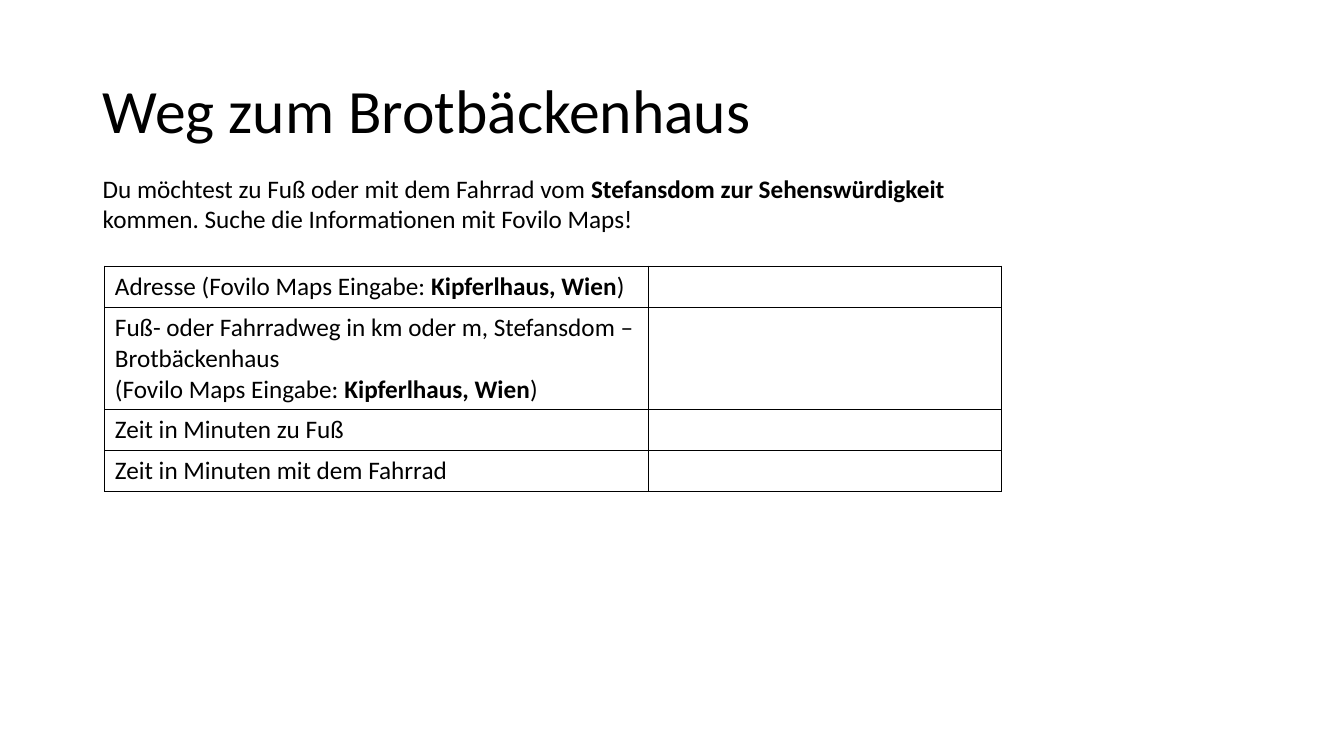
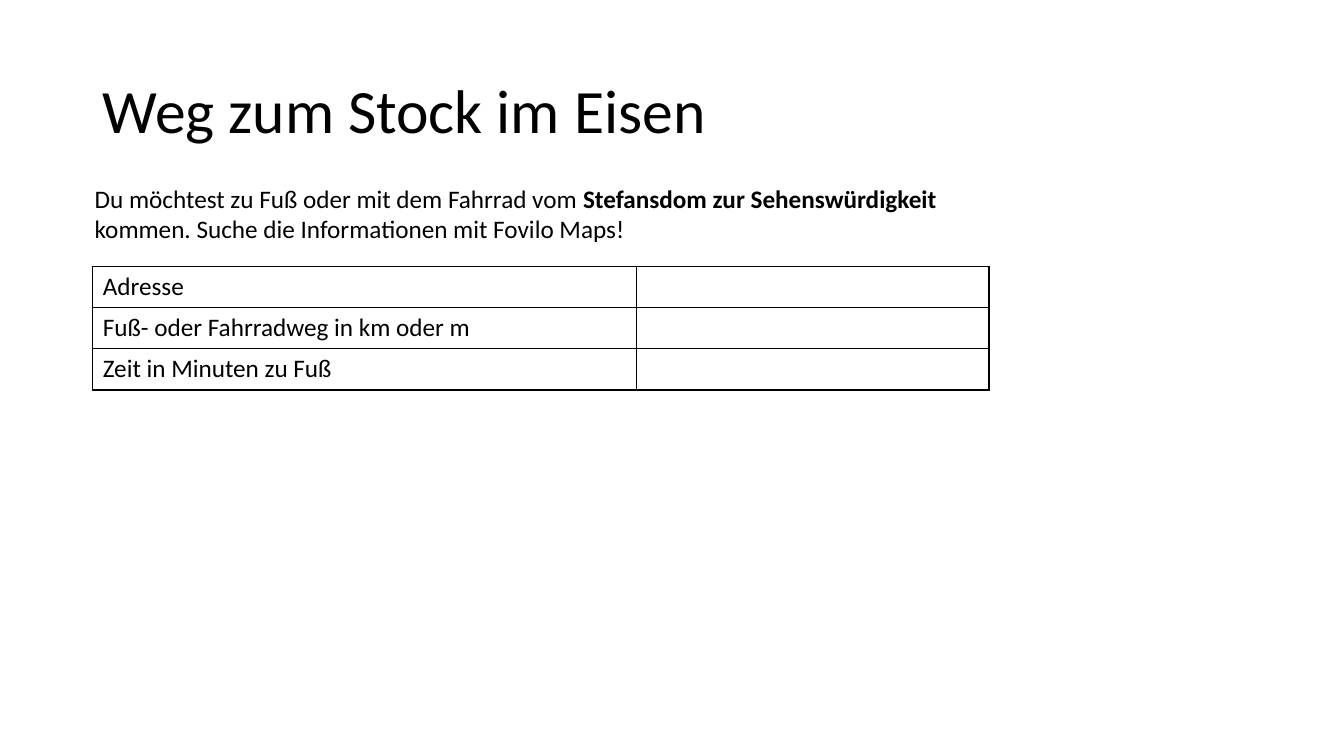
from dataclasses import dataclass

from lxml import etree
from pptx import Presentation
from pptx.dml.color import RGBColor
from pptx.enum.text import MSO_ANCHOR
from pptx.oxml.ns import qn
from pptx.util import Pt

MIDDLE, TOP = MSO_ANCHOR.MIDDLE, MSO_ANCHOR.TOP
PX = 9144  # EMU per px, 100 px to the inch


@dataclass(frozen=True)
class Theme:
    font: str = "Calibri"
    ink: str = "000000"
    title_size: int = 44
    body_size: int = 18
    border_width: int = 1


THEME = Theme()
SLIDE_SIZE = (1333, 750)
TITLE_BOX = (92, 40, 1150, 145)
COLUMNS = (539, 350)
ROW_HEIGHT, LINE_HEIGHT = 41, 30

# Text is a list of lines; a line is a list of (words, bold) runs
TASK = [[("Du möchtest zu Fuß oder mit dem Fahrrad vom ", False),
         ("Stefansdom zur Sehenswürdigkeit ", True),
         ("kommen. Suche die Informationen mit Fovilo Maps!", False)]]
SEARCH_TERM = [("Fovilo Maps Eingabe: ", False), ("Kipferlhaus, Wien", True), (")", False)]


def plain(words):
    return [[(words, False)]]


def search_hint(lead):
    (words, bold), *rest = SEARCH_TERM
    return [(lead + "(" + words, bold), *rest]


# Question and number of text lines it takes in its column
BAKERY_QUESTIONS = [
    ([search_hint("Adresse ")], 1),
    ([[("Fuß- oder Fahrradweg in km oder m, Stefansdom – Brotbäckenhaus", False)],
      search_hint("")], 3),
    (plain("Zeit in Minuten zu Fuß"), 1),
    (plain("Zeit in Minuten mit dem Fahrrad"), 1),
]
TRUNK_QUESTIONS = [
    (plain("Adresse"), 1),
    (plain("Fuß- oder Fahrradweg in km oder m"), 1),
    (plain("Zeit in Minuten zu Fuß"), 1),
]


def emu(box):
    return [length * PX for length in box]


def write(frame, lines, size=THEME.body_size, anchor=TOP, spacing=None):
    """Fill a text frame with one paragraph of formatted lines."""
    frame.word_wrap = True
    frame.vertical_anchor = anchor
    paragraph = frame.paragraphs[0]
    paragraph.line_spacing = spacing
    for index, line in enumerate(lines):
        if index:
            paragraph.add_line_break()
        for words, bold in line:
            run = paragraph.add_run()
            run.text = words
            run.font.name = THEME.font
            run.font.size = Pt(size)
            run.font.bold = bold
            run.font.color.rgb = RGBColor.from_string(THEME.ink)


def add_text(slide, box, lines, **style):
    write(slide.shapes.add_textbox(*emu(box)).text_frame, lines, **style)


def outline_cell(cell):
    """Thin border on every side, no fill."""
    properties = cell._tc.get_or_add_tcPr()
    for side in ("a:lnL", "a:lnR", "a:lnT", "a:lnB"):
        border = etree.SubElement(properties, qn(side), w=str(Pt(THEME.border_width)))
        fill = etree.SubElement(border, qn("a:solidFill"))
        etree.SubElement(fill, qn("a:srgbClr"), val=THEME.ink)
    cell.fill.background()


def add_answer_table(slide, left, top, questions):
    """Questions on the left, empty answer cells on the right."""
    heights = [ROW_HEIGHT + LINE_HEIGHT * (count - 1) for _, count in questions]
    box = (left, top, sum(COLUMNS), sum(heights))
    table = slide.shapes.add_table(len(questions), len(COLUMNS), *emu(box)).table
    table.first_row = table.horz_banding = False
    for column, width in zip(table.columns, COLUMNS):
        column.width = width * PX
    for row, height, (question, _) in zip(table.rows, heights, questions):
        row.height = height * PX
        for cell in row.cells:
            outline_cell(cell)
        write(row.cells[0].text_frame, question)


def add_route_slide(deck, title, task_at, table_at, questions):
    slide = deck.slides.add_slide(deck.slide_layouts[6])
    add_text(slide, TITLE_BOX, plain(title), size=THEME.title_size,
             anchor=MIDDLE, spacing=0.9)
    add_text(slide, (*task_at, sum(COLUMNS), 71), TASK)
    add_answer_table(slide, *table_at, questions)


def main():
    deck = Presentation()
    deck.slide_width, deck.slide_height = emu(SLIDE_SIZE)
    add_route_slide(deck, "Weg zum Brotbäckenhaus", (92, 167), (104, 264), BAKERY_QUESTIONS)
    add_route_slide(deck, "Weg zum Stock im Eisen", (84, 177), (92, 264), TRUNK_QUESTIONS)
    deck.save("out.pptx")


if __name__ == "__main__":
    main()
